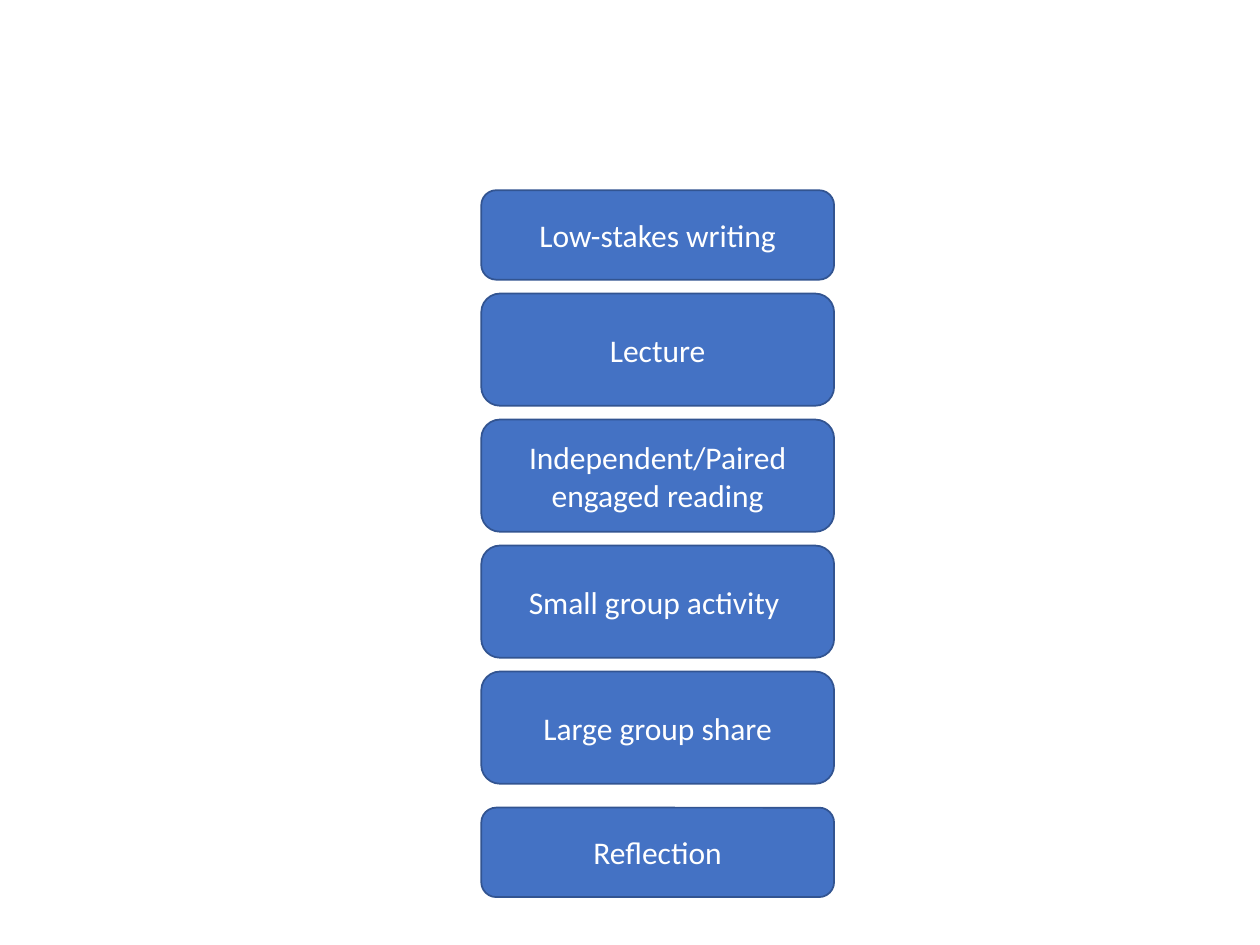
from pptx import Presentation
from pptx import util as u
from pptx.dml.color import RGBColor
from pptx.enum import shapes, text

HUES = {"fill": "4472C4", "line": "325491", "text": "FFFFFF"}
hue = {name: RGBColor.from_string(code) for name, code in HUES.items()}

deck = Presentation()
deck.slide_width, deck.slide_height = u.Inches(10), u.Inches(7.5)
slide = deck.slides.add_slide(deck.slide_layouts[6])

# Lesson steps: tall middle boxes one inch apart, short ones at the ends
LEFT, WIDTH, SHORT, TALL = 3.82, 2.8, 0.71, 0.89
middle = ["Lecture", "Independent/Paired engaged reading",
          "Small group activity ", "Large group share"]
steps = [("Low-stakes writing", 1.51, SHORT)]
steps += [(step, 2.33 + i, TALL) for i, step in enumerate(middle)]
steps.append(("Reflection", 6.41, SHORT))

# Text format shared by all boxes
style = {"name": "Calibri", "size": u.Pt(18)}

for label, top, height in steps:
    box = slide.shapes.add_shape(
        shapes.MSO_SHAPE.ROUNDED_RECTANGLE,
        u.Inches(LEFT), u.Inches(top), u.Inches(WIDTH), u.Inches(height))
    box.shadow.inherit = False
    box.fill.solid()
    box.fill.fore_color.rgb = hue["fill"]
    box.line.color.rgb = hue["line"]
    box.line.width = u.Pt(1)

    # Centred label
    frame = box.text_frame
    frame.word_wrap = True
    frame.vertical_anchor = text.MSO_ANCHOR.MIDDLE
    para = frame.paragraphs[0]
    para.alignment = text.PP_ALIGN.CENTER
    run = para.add_run()
    run.text = label
    for key, value in style.items():
        setattr(run.font, key, value)
    run.font.color.rgb = hue["text"]

deck.save("out.pptx")
